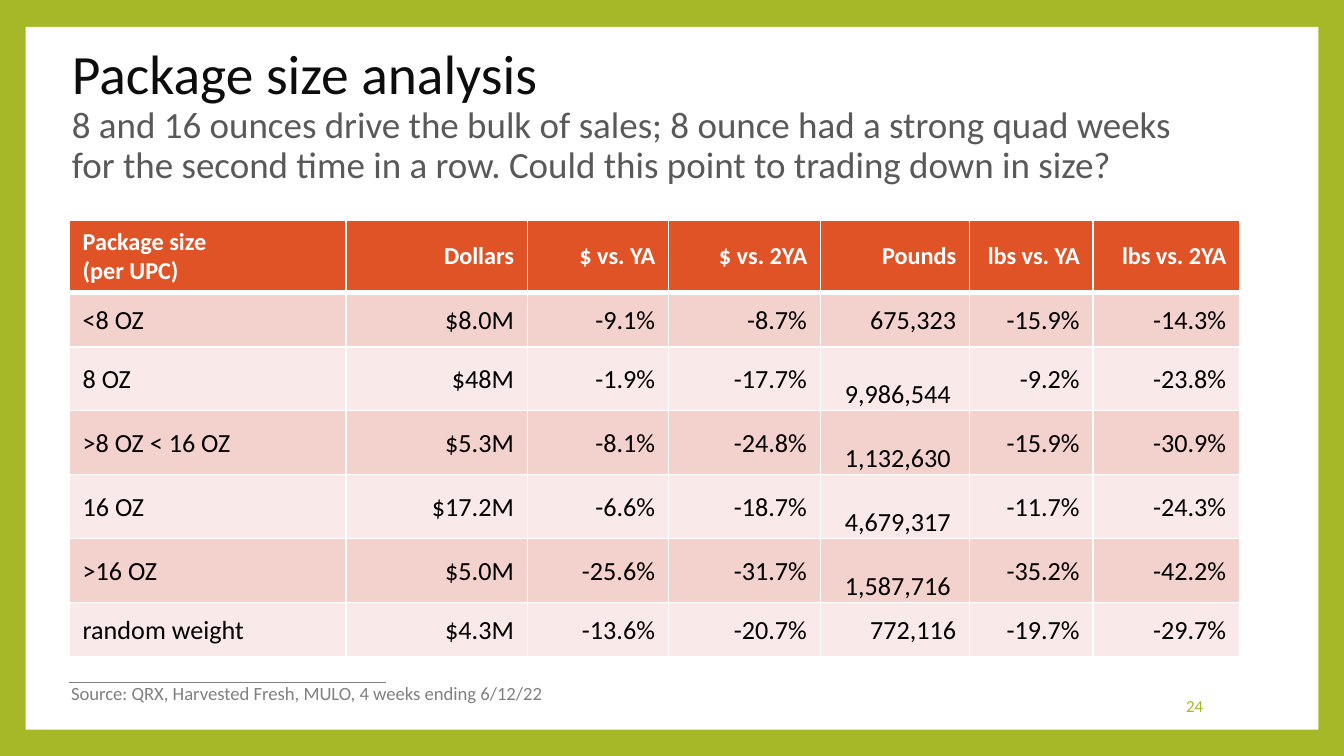
import pptx
import pptx.util
import pptx.dml.color
import pptx.enum.shapes
import pptx.enum.text
import pptx.oxml.ns
import lxml.etree

ALIGN = pptx.enum.text.PP_ALIGN
ANCHOR = pptx.enum.text.MSO_ANCHOR
GREEN, WHITE, GREY = "A6B727", "FFFFFF", "808080"
HEADER_FILL, BANDS = "DF5327", ("F3D1CD", "F9E9E8")
POUNDS = 4

COLUMNS = [20.6, 13.5, 10.5, 11.3, 11.1, 9.2, 10.9]
ROWS = [5.4, 4, 4.76, 4.76, 4.76, 4.76, 4]
CELLS = [
    ["Package size\v(per UPC)", "Dollars", "$ vs. YA", "$ vs. 2YA", "Pounds", "lbs vs. YA", "lbs vs. 2YA"],
    ["<8 OZ", "$8.0M", "-9.1%", "-8.7%", "675,323", "-15.9%", "-14.3%"],
    ["8 OZ", "$48M", "-1.9%", "-17.7%", "9,986,544", "-9.2%", "-23.8%"],
    [">8 OZ < 16 OZ", "$5.3M", "-8.1%", "-24.8%", "1,132,630", "-15.9%", "-30.9%"],
    ["16 OZ", "$17.2M", "-6.6%", "-18.7%", "4,679,317", "-11.7%", "-24.3%"],
    [">16 OZ", "$5.0M", "-25.6%", "-31.7%", "1,587,716", "-35.2%", "-42.2%"],
    ["random weight", "$4.3M", "-13.6%", "-20.7%", "772,116", "-19.7%", "-29.7%"],
]


def rgb(value):
    return pptx.dml.color.RGBColor.from_string(value)


def grid(units):
    return pptx.util.Inches(units / 10)


def child(parent, tag, **attributes):
    return lxml.etree.SubElement(parent, pptx.oxml.ns.qn(tag), **attributes)


class Deck:
    """Holds the style and current slide, laid out on a grid of 100 columns by 56.25 rows."""

    font = "Calibri"

    def __init__(self):
        self.prs = pptx.Presentation()
        self.prs.slide_width, self.prs.slide_height = grid(100), grid(56.25)
        self.s = None

    def slide(self, background):
        self.s = self.prs.slides.add_slide(self.prs.slide_layouts[5])
        fill = self.s.background.fill
        fill.solid()
        fill.fore_color.rgb = rgb(background)

    def style(self, r, size, color, bold=False):
        r.font.name, r.font.size, r.font.bold = self.font, pptx.util.Pt(size), bold
        r.font.color.rgb = rgb(color)

    def paragraph(self, p, size, color, bold=False, align=ALIGN.LEFT):
        p.alignment = align
        for r in p.runs:
            self.style(r, size, color, bold)
        self.size_breaks(p, size)

    def size_breaks(self, p, size):
        for br in p._p.findall(pptx.oxml.ns.qn("a:br")):
            child(br, "a:rPr", sz=str(round(size * 100)))

    def panel(self, x, y, w, h, color):
        kind = pptx.enum.shapes.MSO_SHAPE.RECTANGLE
        sp = self.s.shapes.add_shape(kind, *map(grid, (x, y, w, h)))
        sp.shadow.inherit = False
        sp.fill.solid()
        sp.fill.fore_color.rgb = rgb(color)
        sp.line.fill.background()

    def rule(self, x1, x2, y, color, width):
        kind = pptx.enum.shapes.MSO_CONNECTOR.STRAIGHT
        line = self.s.shapes.add_connector(kind, *map(grid, (x1, y, x2, y)))
        line.line.color.rgb = rgb(color)
        line.line.width = pptx.util.Pt(width)
        child(line._element.spPr, "a:effectLst")

    def title(self, x, y, w, h, lines):
        sp = self.s.shapes.title
        sp.left, sp.top, sp.width, sp.height = map(grid, (x, y, w, h))
        tf = sp.text_frame
        p = tf.paragraphs[0]
        p.text = "\v".join(text for text, size, color in lines)
        p.alignment, p.line_spacing = ALIGN.LEFT, 0.9
        tf.vertical_anchor = ANCHOR.MIDDLE
        tf.auto_size = pptx.enum.text.MSO_AUTO_SIZE.NONE
        for r, (text, size, color) in zip(p.runs, lines):
            self.style(r, size, color)
        self.size_breaks(p, lines[0][1])
        self.s.shapes._spTree.append(sp._element)

    def text(self, x, y, w, h, text, size, color, align=ALIGN.LEFT, wrap=True):
        tf = self.s.shapes.add_textbox(*map(grid, (x, y, w, h))).text_frame
        tf.text = text
        tf.word_wrap = wrap
        tf.vertical_anchor = ANCHOR.MIDDLE
        self.paragraph(tf.paragraphs[0], size, color, align=align)

    def border(self, cell, side, width):
        ln = child(cell._tc.get_or_add_tcPr(), "a:ln" + side, w=str(pptx.util.Pt(width)))
        child(child(ln, "a:solidFill"), "a:srgbClr", val=WHITE)

    def cell(self, cell, text, row, col):
        header, first = row == 0, col == 0
        p = cell.text_frame.paragraphs[0]
        p.text = text
        cell.vertical_anchor = ANCHOR.MIDDLE
        if not header:
            cell.margin_left, cell.margin_right = map(grid, (1, 0.1) if first else (0.1, 1))
            cell.margin_top, cell.margin_bottom = grid(0.1), 0
            if col == POUNDS and ROWS[row] > 4:
                cell.vertical_anchor = ANCHOR.BOTTOM
                cell.margin_right = grid(1.4)
        self.paragraph(p, 13 if header else 14, WHITE if header else "000000", header,
                       ALIGN.LEFT if first else ALIGN.RIGHT)
        for side, width in zip("LRTB", (1, 1, 3 if row == 1 else 1, 3 if header else 1)):
            self.border(cell, side, width)
        cell.fill.solid()
        cell.fill.fore_color.rgb = rgb(HEADER_FILL if header else BANDS[(row - 1) % 2])

    def table(self, x, y, widths, heights, rows):
        size = map(grid, (x, y, sum(widths), sum(heights)))
        table = self.s.shapes.add_table(len(heights), len(widths), *size).table
        for column, width in zip(table.columns, widths):
            column.width = grid(width)
        for i, (height, texts) in enumerate(zip(heights, rows)):
            table.rows[i].height = grid(height)
            for j, text in enumerate(texts):
                self.cell(table.cell(i, j), text, i, j)


def main():
    deck = Deck()
    deck.slide(GREEN)
    deck.panel(1.9, 2, 96.2, 52.3, WHITE)
    deck.rule(5.1, 28.7, 50.8, GREY, 0.79)
    deck.title(4.35, 3.4, 85.3, 10.6, [
        ("Package size analysis", 29.7, "0D0D0D"),
        ("8 and 16 ounces drive the bulk of sales; 8 ounce had a strong quad weeks "
         "for the second time in a row. Could this point to trading down in size?", 19.8, "595959"),
    ])
    deck.text(76.5, 51, 14, 3, "24", 9, GREEN, ALIGN.RIGHT)
    deck.text(4.3, 50.2, 37.1, 2.7, "Source: QRX, Harvested Fresh, MULO, 4 weeks ending 6/12/22",
              10, GREY, wrap=False)
    deck.table(5.15, 16.4, COLUMNS, ROWS, CELLS)
    deck.prs.save("out.pptx")


if __name__ == "__main__":
    main()
